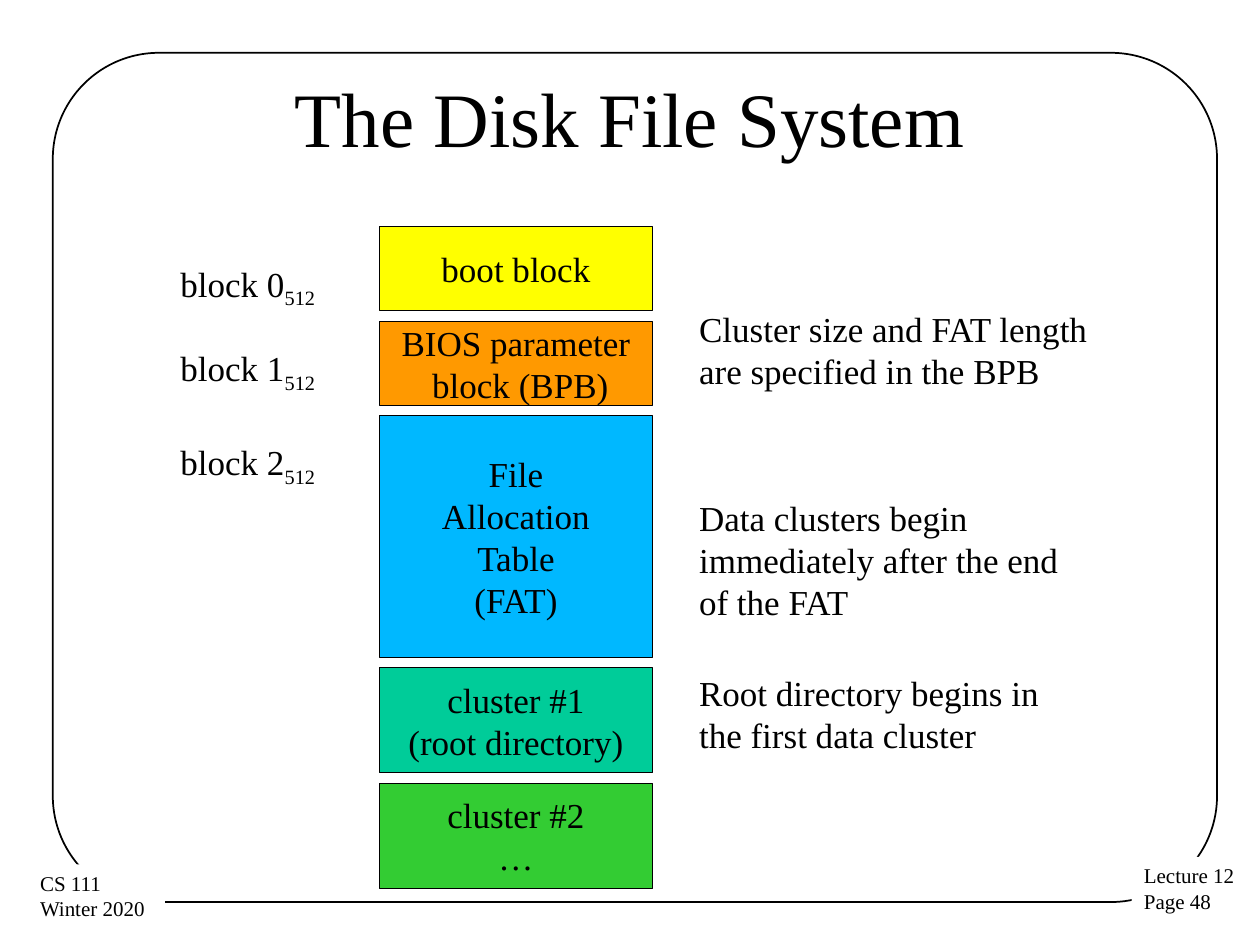
"""Build a slide showing the on-disk layout of a file system."""
from pptx import Presentation
from pptx.dml.color import RGBColor
from pptx.enum import shapes, text
from pptx.util import Pt

BLACK = RGBColor(0x00, 0x00, 0x00)
WHITE = RGBColor(0xFF, 0xFF, 0xFF)
YELLOW = RGBColor(0xFF, 0xFF, 0x00)
ORANGE = RGBColor(0xFF, 0x99, 0x00)
BLUE = RGBColor(0x00, 0xB8, 0xFF)
TEAL = RGBColor(0x00, 0xCC, 0x99)
GREEN = RGBColor(0x33, 0xCC, 0x33)

FONT = "Times New Roman"
LEFT, CENTER, RIGHT = text.PP_ALIGN.LEFT, text.PP_ALIGN.CENTER, text.PP_ALIGN.RIGHT
TOP, MIDDLE = text.MSO_ANCHOR.TOP, text.MSO_ANCHOR.MIDDLE

STACK_LEFT, STACK_TOP, STACK_WIDTH, STACK_GAP = 216.7, 129.6, 156.3, 6
STACK = [
    ("boot block", 48, YELLOW),
    ("BIOS parameter\n block (BPB)", 48, ORANGE),
    ("File\nAllocation\vTable\n(FAT)", 138, BLUE),
    ("cluster #1\n(root directory)", 60, TEAL),
    ("cluster #2\n…", 60, GREEN),
]
BLOCK_LABELS = [("block 0", 146.2), ("block 1", 194.4), ("block 2", 248.4)]
REMARKS = [
    ("Cluster size and FAT length are specified in the BPB", 172.1, 262.8, 55.4),
    ("Data clusters begin immediately after the end of the FAT", 280.1, 234.7, 79.9),
    ("Root directory begins in the first data cluster", 380.2, 234.7, 55.4),
]
CORNERS = [
    ("Lecture 12\nPage 48", 646.6, 489.6, 67),
    ("CS 111\nWinter 2020", 15.8, 493.9, 78.5),
]


def write(frame, wording, size=20, align=LEFT, anchor=TOP, wrap=True, subscript=""):
    """Fill a text frame with formatted wording and an optional subscript."""
    frame.text = wording
    frame.word_wrap = wrap
    frame.vertical_anchor = anchor
    if subscript:
        lowered = frame.paragraphs[-1].add_run()
        lowered.text = subscript
        lowered.font._element.set("baseline", "-25000")
    for paragraph in frame.paragraphs:
        paragraph.alignment = align
        for run in paragraph.runs:
            run.font.name = FONT
            run.font.size = Pt(size)
            run.font.color.rgb = BLACK


def add_box(slide, preset, left, top, width, height, fill=None, line=None):
    """Add a preset shape with an optional fill colour and line width."""
    box = slide.shapes.add_shape(preset, Pt(left), Pt(top), Pt(width), Pt(height))
    box.shadow.inherit = False
    if fill is None:
        box.fill.background()
    else:
        box.fill.solid()
        box.fill.fore_color.rgb = fill
    if line is None:
        box.line.fill.background()
    else:
        box.line.color.rgb = BLACK
        box.line.width = Pt(line)
    return box


def add_note(slide, wording, left, top, width, height, **style):
    """Add a wrapping text box."""
    note = slide.shapes.add_textbox(Pt(left), Pt(top), Pt(width), Pt(height))
    write(note.text_frame, wording, **style)
    note.text_frame.auto_size = text.MSO_AUTO_SIZE.SHAPE_TO_FIT_TEXT


def add_title(slide, wording):
    """Place and format the title."""
    title = slide.shapes.title
    title.left, title.top, title.width, title.height = Pt(36), Pt(21.6), Pt(648), Pt(90)
    write(title.text_frame, wording, size=44, align=CENTER, anchor=MIDDLE)


def add_frame(slide):
    """Add the rounded page frame and the corner captions that interrupt it."""
    frame = add_box(slide, shapes.MSO_SHAPE.ROUNDED_RECTANGLE,
                    30.2, 30.2, 665.3, 485.3, line=1)
    frame.adjustments[0] = 0.125
    for wording, left, top, width in CORNERS:
        corner = add_box(slide, shapes.MSO_SHAPE.RECTANGLE,
                         left, top, width, 36.7, fill=WHITE)
        write(corner.text_frame, wording, size=12, wrap=False)
        corner.text_frame.auto_size = text.MSO_AUTO_SIZE.SHAPE_TO_FIT_TEXT


def add_stack(slide):
    """Add the column of disk regions, evenly spaced from the top."""
    top = STACK_TOP
    for wording, height, fill in STACK:
        region = add_box(slide, shapes.MSO_SHAPE.RECTANGLE, STACK_LEFT, top,
                         STACK_WIDTH, height, fill=fill, line=0.75)
        write(region.text_frame, wording, align=CENTER, anchor=MIDDLE, wrap=False)
        top += height + STACK_GAP


def main():
    """Build and save the slide."""
    deck = Presentation()
    deck.slide_width, deck.slide_height = Pt(720), Pt(540)
    slide = deck.slides.add_slide(deck.slide_layouts[5])
    add_frame(slide)
    add_title(slide, "The Disk File System")
    add_stack(slide)
    for wording, top in BLOCK_LABELS:
        add_note(slide, wording, 43.2, top, 144, 31, align=RIGHT, subscript="512")
    for wording, top, width, height in REMARKS:
        add_note(slide, wording, 392.4, top, width, height)
    deck.save("out.pptx")


if __name__ == "__main__":
    main()
